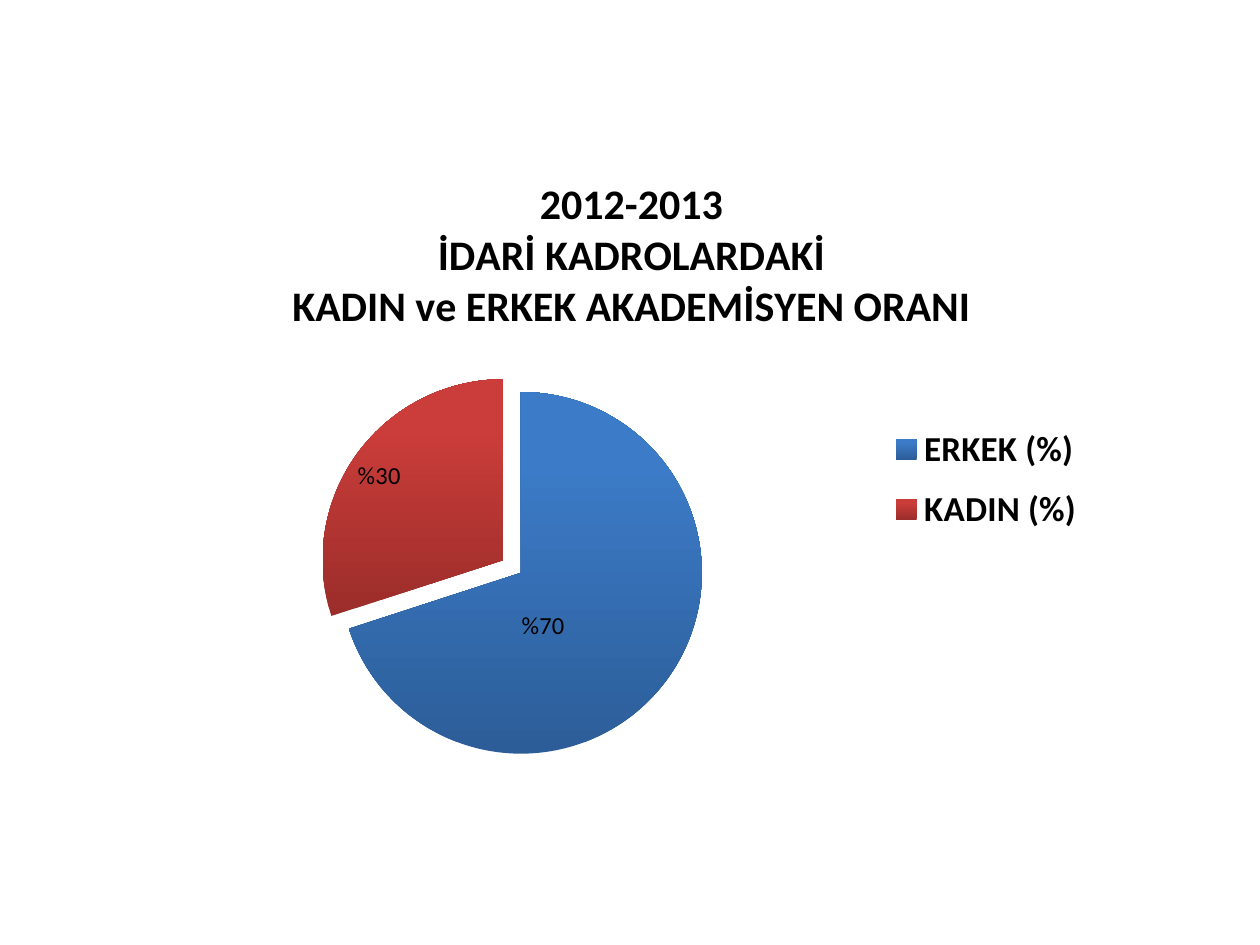
from lxml import etree
from pptx import Presentation
from pptx.chart.data import CategoryChartData
from pptx.dml.color import RGBColor
from pptx.enum.chart import XL_CHART_TYPE, XL_LABEL_POSITION, XL_LEGEND_POSITION
from pptx.oxml.ns import qn
from pptx.util import Inches, Pt

PIE = XL_CHART_TYPE.PIE
CENTER = XL_LABEL_POSITION.CENTER
RIGHT = XL_LEGEND_POSITION.RIGHT
BLACK = RGBColor(0x00, 0x00, 0x00)
DARK_BLUE = RGBColor(0x2C, 0x5D, 0x98)
BLUE = RGBColor(0x3C, 0x7B, 0xC7)
DARK_RED = RGBColor(0x9B, 0x2D, 0x2A)
RED = RGBColor(0xCB, 0x3D, 0x3A)


def format_font(font, size, bold):
    values = {"name": "Calibri", "size": Pt(size), "bold": bold}
    for name, value in values.items():
        setattr(font, name, value)
    font.color.rgb = BLACK


def set_layout(parent, index, values):
    for old in parent.findall(qn("c:layout")):
        parent.remove(old)
    layout = etree.Element(qn("c:layout"))
    manual = etree.SubElement(layout, qn("c:manualLayout"))
    for name, value in values.items():
        etree.SubElement(manual, qn("c:" + name)).set("val", str(value))
    parent.insert(index, layout)


deck = Presentation()
deck.slide_width = Inches(10)
deck.slide_height = Inches(7.5)
page = deck.slides.add_slide(deck.slide_layouts[6])

data = CategoryChartData()
data.categories = ["ERKEK (%)", "KADIN (%)"]
data.add_series("Series 1", [70, 30])
chart = page.shapes.add_chart(
    PIE, Inches(0.58), Inches(1.33), Inches(9), Inches(4.95), data
).chart
format_font(chart.font, 10, False)

chart.has_title = True
title = chart.chart_title.text_frame
title_lines = ["2012-2013", "İDARİ KADROLARDAKİ", "KADIN ve ERKEK AKADEMİSYEN ORANI"]
for number, line in enumerate(title_lines):
    para = title.add_paragraph() if number else title.paragraphs[0]
    span = para.add_run()
    span.text = line
    format_font(span.font, 24, True)
edges = {"xMode": "edge", "yMode": "edge"}
set_layout(chart.chart_title._element, 1, {**edges, "x": 0.19, "y": 0.01})

chart.has_legend = True
legend = chart.legend
legend.position = RIGHT
legend.include_in_layout = False
format_font(legend.font, 20, True)
set_layout(legend._element, 1, {**edges, "x": 0.72, "y": 0.39, "w": 0.17, "h": 0.22})
set_layout(chart._chartSpace.chart.plotArea, 0, {
    "layoutTarget": "inner", **edges, "x": 0.23, "y": 0.36, "w": 0.33, "h": 0.58,
})

plot = chart.plots[0]
plot.vary_by_categories = True
series = plot.series[0]
slices = [
    ("%70", DARK_BLUE, BLUE, 0),
    ("%30", DARK_RED, RED, -5),
]
for number, (text, dark, light, rise_percent) in enumerate(slices):
    point = series.points[number]
    fill = point.format.fill
    fill.gradient()
    fill.gradient_angle = 90
    for stop, color, position in zip(fill.gradient_stops, (dark, light), (0, 0.8)):
        stop.color.rgb = color
        stop.position = position
    label = point.data_label
    span = label.text_frame.paragraphs[0].add_run()
    span.text = text
    format_font(span.font, 14, False)
    label.position = CENTER
    set_layout(label._dLbl, 1, {"x": -4.5 / 100, "y": rise_percent / 100})

exploded = series.points[1].format.fill._xPr.getparent()
explosion = etree.Element(qn("c:explosion"))
explosion.set("val", "12")
exploded.insert(exploded.index(exploded.find(qn("c:spPr"))), explosion)

deck.save("out.pptx")
